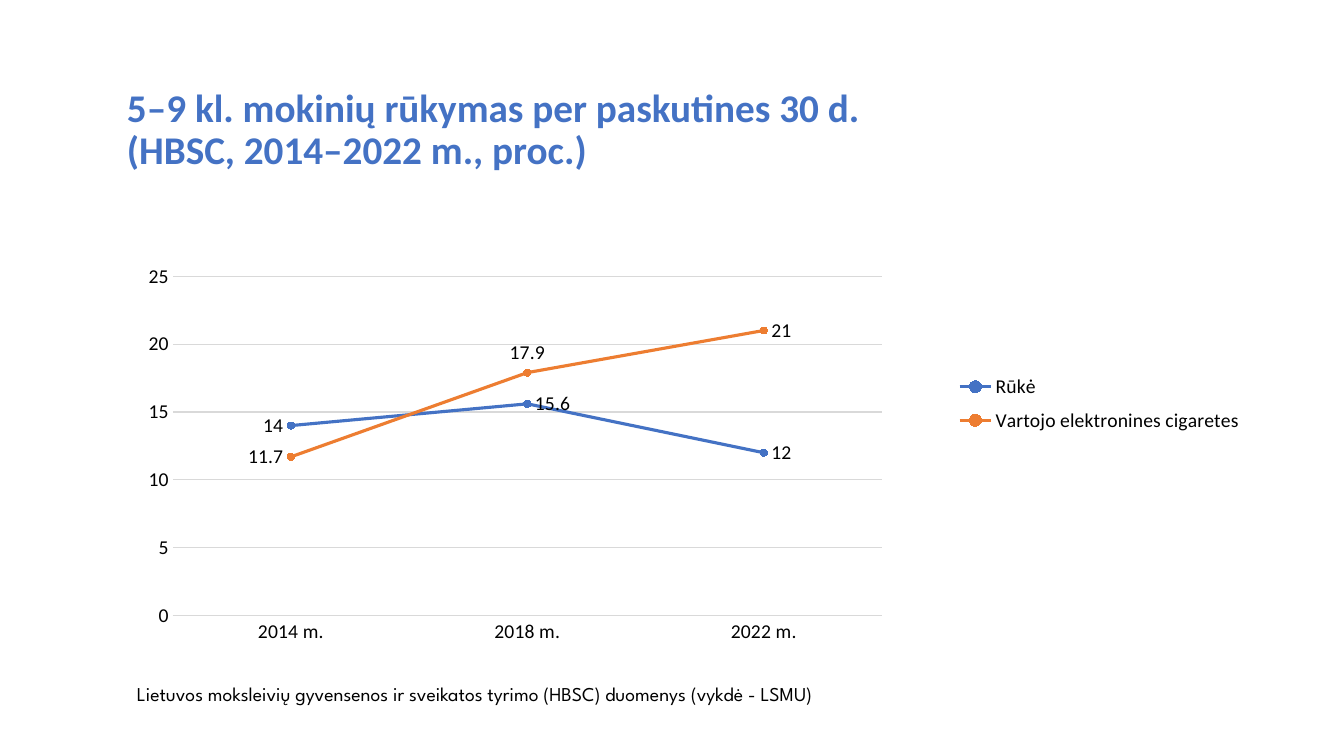
from lxml.etree import SubElement, QName
from pptx import Presentation
from pptx.chart.data import CategoryChartData
from pptx.dml.color import RGBColor
from pptx.enum.chart import (XL_CHART_TYPE as ChartType, XL_LABEL_POSITION as LabelSide,
                             XL_LEGEND_POSITION as LegendSide, XL_MARKER_STYLE as Marker,
                             XL_TICK_MARK as Tick)
from pptx.enum.text import MSO_ANCHOR as Anchor, MSO_AUTO_SIZE as AutoSize
from pptx.util import Pt

COLORS = {"smoked": "4472C4", "vaped": "ED7D31", "text": "000000", "grid": "D9D9D9"}


class SmokingSlide:
    """Holds the style and the current slide, and adds its elements."""

    def __init__(self, deck):
        self.body_font, self.source_font, self.size = "Calibri", "League Spartan", 14
        self.slide = deck.slides.add_slide(deck.slide_layouts[5])

    def color(self, name):
        return RGBColor.from_string(COLORS[name])

    def style(self, font, face, size, color, bold=False):
        font.name, font.size, font.bold = face, Pt(size), bold
        font.color.rgb = self.color(color)

    def stroke(self, line, color, width):
        line.color.rgb = self.color(color)
        line.width = Pt(width)

    def place(self, shape, left, top, width, height):
        shape.left, shape.top, shape.width, shape.height = map(Pt, (left, top, width, height))

    def title(self, lines, box):
        heading = self.slide.shapes.title
        self.place(heading, *box)
        frame = heading.text_frame
        frame.word_wrap, frame.auto_size = True, AutoSize.NONE
        frame.vertical_anchor = Anchor.BOTTOM
        paragraph = frame.paragraphs[0]
        paragraph.alignment, paragraph.line_spacing = 1, 0.9
        for index, line in enumerate(lines):
            if index:
                paragraph.add_line_break()
            run = paragraph.add_run()
            run.text = line
            self.style(run.font, self.body_font, 28, "smoked", True)

    def source(self, wording, box):
        note = self.slide.shapes.add_textbox(*map(Pt, box))
        note.text_frame.word_wrap = True
        run = note.text_frame.paragraphs[0].add_run()
        run.text = wording
        self.style(run.font, self.source_font, self.size, "text")

    def layout(self, parent, index, settings):
        namespace = QName(parent).namespace
        for old in parent.findall(f"{{{namespace}}}layout"):
            parent.remove(old)
        layout = SubElement(parent, f"{{{namespace}}}layout")
        parent.insert(index, layout)
        manual = SubElement(layout, f"{{{namespace}}}manualLayout")
        for tag, value in settings.items():
            SubElement(manual, f"{{{namespace}}}{tag}").set("val", str(value))

    def axis(self, axis):
        axis.major_tick_mark = axis.minor_tick_mark = Tick.NONE
        self.style(axis.tick_labels.font, self.body_font, self.size, "text")

    def line_series(self, series, color, label_sides):
        series.smooth = False
        self.stroke(series.format.line, color, 2.25)
        marker = series.marker
        marker.style, marker.size = Marker.CIRCLE, 5
        marker.format.fill.solid()
        marker.format.fill.fore_color.rgb = self.color(color)
        self.stroke(marker.format.line, color, 0.75)
        labels = series.data_labels
        labels.show_value, labels.position = True, LabelSide.RIGHT
        self.style(labels.font, self.body_font, self.size, "text")
        for index, side in label_sides.items():
            label = series.points[index].data_label
            self.style(label.font, self.body_font, self.size, "text")
            label.position = side

    def line_chart(self, years, habits, box):
        data = CategoryChartData()
        data.categories = years
        for name, values, _, _ in habits:
            data.add_series(name, values)
        chart = self.slide.shapes.add_chart(ChartType.LINE_MARKERS, *map(Pt, box), data).chart
        chart.has_title = False
        self.style(chart.font, self.body_font, self.size, "text")
        plot = chart.plots[0]
        plot.vary_by_categories = False
        for series, (_, _, color, label_sides) in zip(plot.series, habits):
            self.line_series(series, color, label_sides)
        years_axis, percent_axis = chart.category_axis, chart.value_axis
        self.axis(years_axis)
        self.axis(percent_axis)
        self.stroke(years_axis.format.line, "grid", 0.75)
        percent_axis.format.line.fill.background()
        percent_axis.minimum_scale, percent_axis.maximum_scale = 0, 25
        percent_axis.major_unit = 5
        self.stroke(percent_axis.major_gridlines.format.line, "grid", 0.75)
        chart.has_legend = True
        legend = chart.legend
        legend.position, legend.include_in_layout = LegendSide.RIGHT, False
        self.style(legend.font, self.body_font, self.size, "text")
        edges = {"xMode": "edge", "yMode": "edge"}
        self.layout(plot._element.getparent(), 0, {
            "layoutTarget": "inner", **edges, "x": 0.04, "y": 0.05, "w": 0.62, "h": 0.84})
        self.layout(legend._element, 1, {
            **edges, "x": 0.72, "y": 0.27, "w": 0.26, "h": 0.19})


def main():
    deck = Presentation()
    deck.slide_width, deck.slide_height = Pt(960), Pt(540)
    smoking = SmokingSlide(deck)
    smoking.title(["5–9 kl. mokinių rūkymas per paskutines 30 d.",
                   "(HBSC, 2014–2022 m., proc.)"], (83.5, 62.6, 739.5, 64.8))
    smoking.line_chart(["2014 m.", "2018 m.", "2022 m."], [
        ("Rūkė", (14, 15.6, 12), "smoked", {0: LabelSide.LEFT}),
        ("Vartojo elektronines cigaretes", (11.7, 17.9, 21), "vaped",
         {0: LabelSide.LEFT, 1: LabelSide.ABOVE}),
    ], (90.7, 182.9, 817.2, 288.7))
    smoking.source("Lietuvos moksleivių gyvensenos ir sveikatos tyrimo (HBSC) duomenys "
                   "(vykdė - LSMU)", (90.7, 483.8, 746, 24.5))
    deck.save("out.pptx")


if __name__ == "__main__":
    main()
